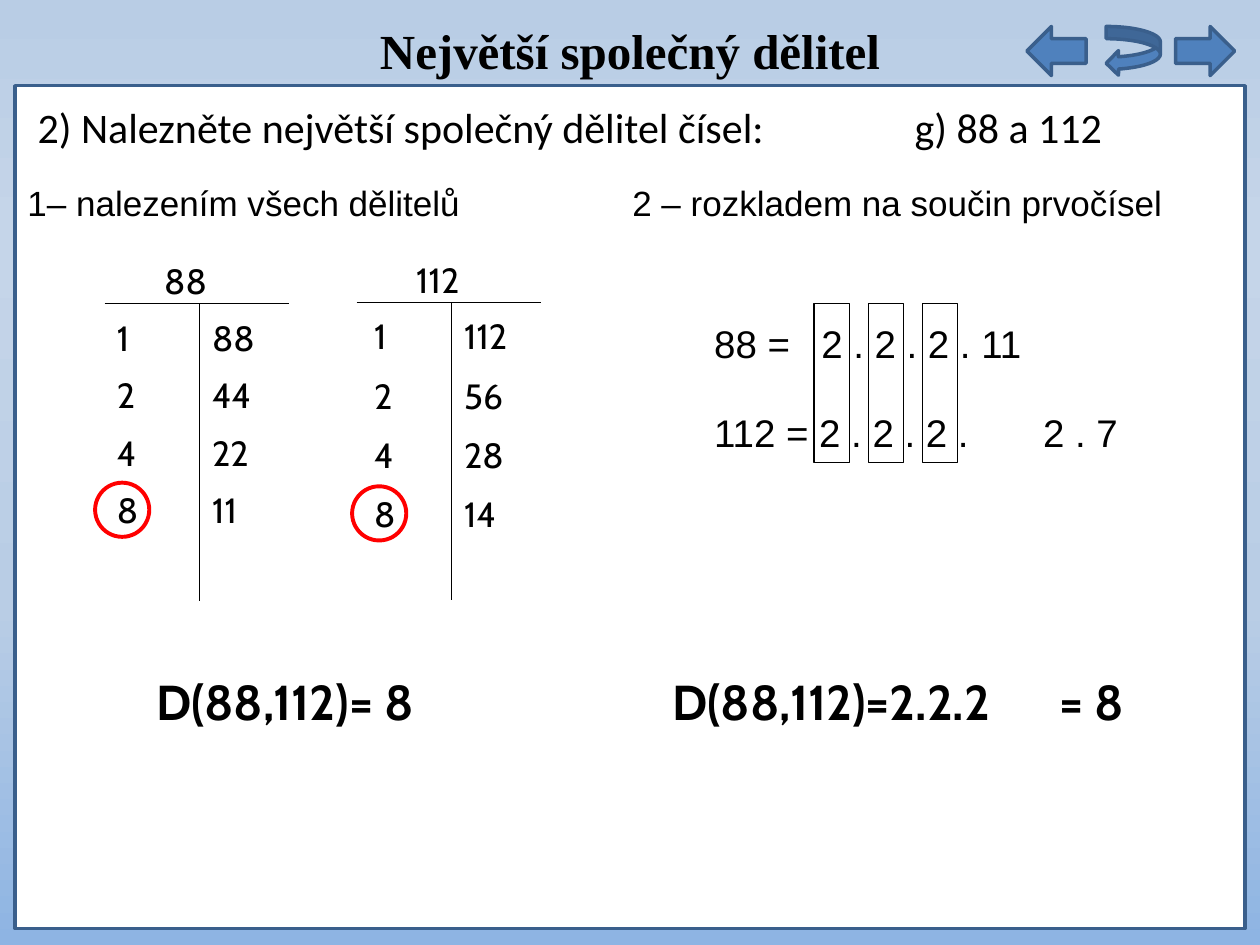
from lxml import etree
from pptx import Presentation
from pptx.dml.color import RGBColor
from pptx.enum.shapes import MSO_CONNECTOR, MSO_SHAPE
from pptx.enum.text import MSO_ANCHOR, PP_ALIGN
from pptx.oxml.ns import qn
from pptx.util import Inches, Pt

RECT, OVAL = MSO_SHAPE.RECTANGLE, MSO_SHAPE.OVAL
ARROW, BACK = MSO_SHAPE.RIGHT_ARROW, MSO_SHAPE.CURVED_LEFT_ARROW
STRAIGHT = MSO_CONNECTOR.STRAIGHT
TOP, MIDDLE = MSO_ANCHOR.TOP, MSO_ANCHOR.MIDDLE
CENTER = PP_ALIGN.CENTER

# The page is a grid of 100 columns by 75 rows of square cells.
COLUMNS, ROWS = 100, 75
BLACK, WHITE, RED, BLUE, NAVY = "000000", "FFFFFF", "FF0000", "4F81BD", "3A5F8C"
BACKGROUND = [(0, "B9CDE5"), (25, "C5D5E9"), (64, "B9CDE5"), (100, "8EB4E3")]

TITLE = {"name": "Times New Roman", "size": Pt(28), "bold": True}
TASK = {"name": "Calibri", "size": Pt(24)}
METHOD = {"name": "Arial", "size": Pt(20)}
FACTORS = {"name": "Arial", "size": Pt(22)}
NUMBER = {"name": "Cabin", "size": Pt(20)}
RESULT = {"name": "Cabin", "size": Pt(28), "bold": True}


def cells(*counts):
    """Turn counts of grid cells into lengths."""
    return [Inches(count / 10) for count in counts]


def color(code):
    return RGBColor.from_string(code)


def paint_background(page):
    fill = page.background.fill
    fill.gradient()
    fill.gradient_angle = 270
    stops = page.element.find(".//" + qn("a:gsLst"))
    for stop in list(stops):
        stops.remove(stop)
    for percent, code in BACKGROUND:
        stop = etree.SubElement(stops, qn("a:gs"), pos=str(percent * 1000))
        etree.SubElement(stop, qn("a:srgbClr"), val=code)


def add_outline(page, kind, place, fill=None, line=BLACK, width=0.75):
    shape = page.shapes.add_shape(kind, *cells(*place))
    shape.shadow.inherit = False
    if fill:
        shape.fill.solid()
        shape.fill.fore_color.rgb = color(fill)
    else:
        shape.fill.background()
    shape.line.color.rgb = color(line)
    shape.line.width = Pt(width)
    return shape


def add_line(page, *ends):
    line = page.shapes.add_connector(STRAIGHT, *cells(*ends))
    line.line.color.rgb = color(BLACK)
    line.line.width = Pt(0.75)
    etree.SubElement(line.element.spPr, qn("a:effectLst"))


def add_text(page, text, place, style, align=None, anchor=TOP, tab=None):
    """Add one line of text; tab is a stop in columns from the text's start."""
    box = page.shapes.add_textbox(*cells(*place))
    frame = box.text_frame
    frame.word_wrap = True
    frame.vertical_anchor = anchor
    para = frame.paragraphs[0]
    para.alignment = align
    if tab:
        stops = etree.SubElement(para._p.get_or_add_pPr(), qn("a:tabLst"))
        etree.SubElement(stops, qn("a:tab"), pos=str(cells(tab)[0]), algn="l")
    span = para.add_run()
    span.text = text
    span.font.color.rgb = color(BLACK)
    for name, value in style.items():
        setattr(span.font, name, value)


def add_navigation(page):
    for kind, left, width in ((ARROW, 81.5, 4.7), (BACK, 87.8, 4.3), (ARROW, 93.3, 4.7)):
        shape = add_outline(page, kind, (left, 2.1, width, 3.9), BLUE, NAVY, 2)
        if left == 81.5:
            shape.element.spPr.find(qn("a:xfrm")).set("flipH", "1")


def add_divisors(page, number, left, top, indent, pitch, pairs):
    """Add the divisor pairs of a number under a T rule, the last one circled."""
    middle = left + 7.55
    add_line(page, left, top, left + 14.65, top)
    add_line(page, middle, top, middle, top + 23.6)
    add_text(page, number, (left + 3.75, top - 4, 7.1, 4.4), NUMBER)
    for row, pair in enumerate(pairs):
        y = top + 0.5 + row * pitch
        for x, divisor in zip((left + indent, middle), pair):
            add_text(page, divisor, (x, y, 7.1, 4.4), NUMBER)
    add_outline(page, OVAL, (left + indent - 0.75, y, 4.3, 4.3), line=RED, width=2.25)


def main():
    deck = Presentation()
    deck.slide_width, deck.slide_height = cells(COLUMNS, ROWS)
    page = deck.slides.add_slide(deck.slide_layouts[6])
    paint_background(page)

    add_outline(page, RECT, (1.2, 6.8, 97.6, 66.9), WHITE, NAVY, 2)
    add_text(page, "Největší společný dělitel", (1.2, 1.1, 97.6, 5.7), TITLE, CENTER)
    add_navigation(page)

    add_text(page, "2) Nalezněte největší společný dělitel čísel:\tg) 88 a 112",
             (2, 7.6, 99.2, 5.1), TASK, tab=69.6)
    add_text(page, "1– nalezením všech dělitelů", (1.2, 13.9, 38.6, 4.4), METHOD)
    add_text(page, "2 – rozkladem na součin prvočísel", (49.2, 13.9, 48, 4.4), METHOD)

    add_divisors(page, "88", 8.3, 24.1, 0, 4.57,
                 [("1", "88"), ("2", "44"), ("4", "22"), ("8", "11")])
    add_divisors(page, "112", 28.3, 24, 0.4, 4.7,
                 [("1", "112"), ("2", "56"), ("4", "28"), ("8", "14")])

    add_text(page, "88 =\t2 . 2 . 2 . 11", (55.7, 24.9, 38.4, 4.7), FACTORS, tab=8.5)
    add_text(page, "112 = 2 . 2 . 2 .\t2 . 7", (55.7, 32, 38.4, 4.7), FACTORS, tab=26.1)
    for common in range(3):
        add_outline(page, RECT, (64.6 + common * 4.3, 24.1, 2.8, 12.6))

    for text, place in (("D(88,112)= 8", (11.4, 52.6, 30.1, 6.1)),
                        ("D(88,112)=2.2.2", (52.4, 51.7, 35.4, 7.9)),
                        ("= 8", (83.1, 51.7, 11.8, 7.9))):
        add_text(page, text, place, RESULT, anchor=MIDDLE)

    deck.save("out.pptx")


if __name__ == "__main__":
    main()
